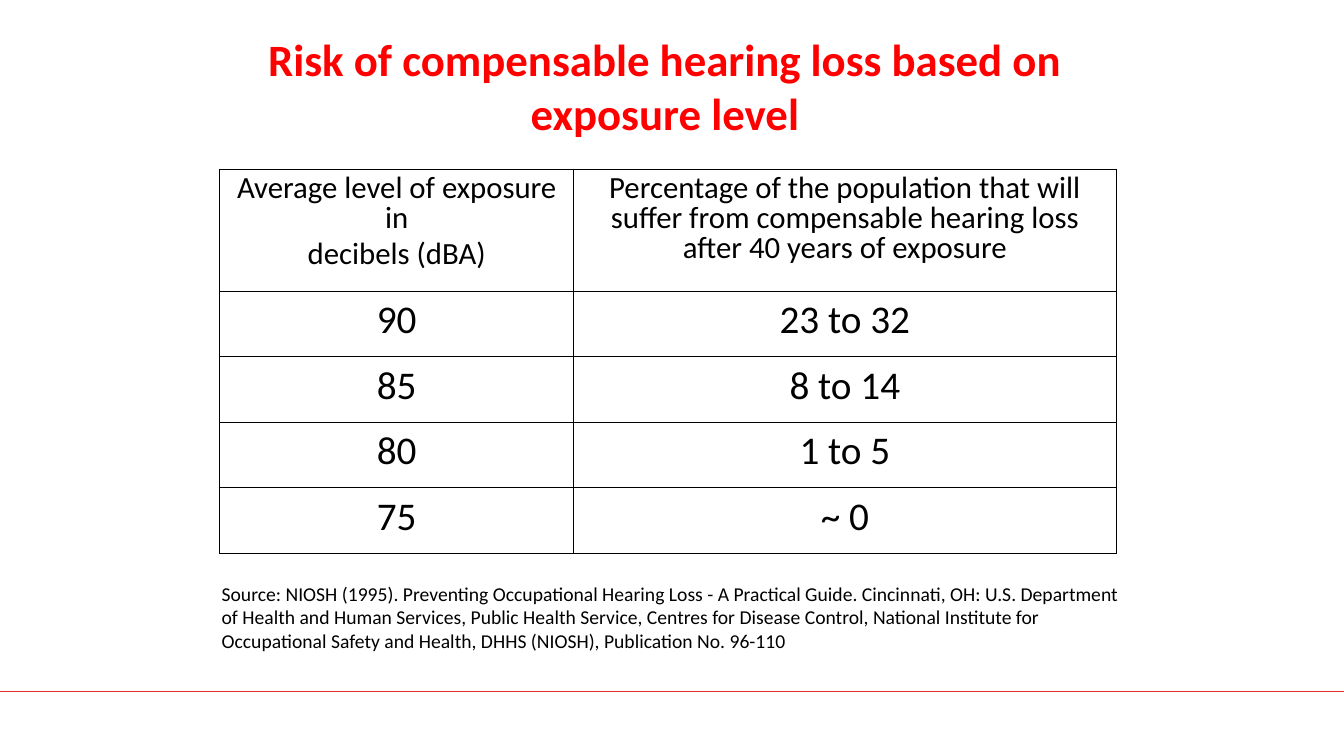
from dataclasses import dataclass
from lxml.etree import SubElement
from pptx import Presentation
from pptx.dml.color import RGBColor as RGB
from pptx.enum.shapes import MSO_CONNECTOR as Link
from pptx.enum.text import MSO_AUTO_SIZE as Fit, PP_ALIGN as Align
from pptx.oxml.ns import qn
from pptx.util import Inches, Pt


@dataclass
class Theme:
    face: str = "Calibri"
    ink: str = "000000"
    title: str = "FF0000"
    rule: str = "E62B27"
    title_size: int = 32
    head_size: int = 22
    body_size: int = 28
    note_size: int = 14


theme = Theme()


def write(frame, text, size, color, align=Align.CENTER, bold=False):
    frame.word_wrap = True
    frame.text = text
    for para in frame.paragraphs:
        para.alignment = align
        font = para.font
        font.name, font.size, font.bold = theme.face, Pt(size), bold
        font.color.rgb = RGB.from_string(color)


def outline(cell):
    props = cell._tc.get_or_add_tcPr()
    for at, side in enumerate(("lnL", "lnR", "lnT", "lnB")):
        line = props.makeelement(qn("a:" + side), {"w": str(Pt(1))})
        fill = SubElement(line, qn("a:solidFill"))
        SubElement(fill, qn("a:srgbClr"), val=theme.ink)
        props.insert(at, line)


deck = Presentation()
deck.slide_width, deck.slide_height = Inches(13.33), Inches(7.5)
slide = deck.slides.add_slide(deck.slide_layouts[6])
shapes = slide.shapes

# Footer rule
rule = shapes.add_connector(
    Link.STRAIGHT, Inches(0), Inches(6.86), Inches(13.33), Inches(6.86))
rule.line.color.rgb = RGB.from_string(theme.rule)
rule.line.width = Pt(0.25)
SubElement(rule._element.spPr, qn("a:effectLst"))

# Risk table
rows = [
    ("Average level of exposure in\ndecibels (dBA)",
     "Percentage of the population that will suffer from compensable "
     "hearing loss after 40 years of exposure"),
    ("90", "23 to 32"),
    ("85", "8 to 14"),
    ("80", "1 to 5"),
    ("75", "~ 0"),
]
table = shapes.add_table(
    len(rows), 2, Inches(2.18), Inches(1.68), Inches(8.89), Inches(3.81)).table
table.first_row = table.horz_banding = False
for col, width in zip(table.columns, (3.51, 5.38)):
    col.width = Inches(width)
for r, row in enumerate(rows):
    head = r == 0
    table.rows[r].height = Inches(1.21 if head else 0.65)
    for c, text in enumerate(row):
        cell = table.cell(r, c)
        cell.fill.background()
        outline(cell)
        size = theme.head_size if head else theme.body_size
        write(cell.text_frame, text, size, theme.ink)
        if head:
            for n, para in enumerate(cell.text_frame.paragraphs):
                para.line_spacing = 0.8
                if n:
                    para.space_before = Pt(4.4)

# Source note
note = shapes.add_textbox(
    Inches(2.1), Inches(5.72), Inches(9.15), Inches(0.81)).text_frame
write(note,
      "Source: NIOSH (1995). Preventing Occupational Hearing Loss - A Practical "
      "Guide. Cincinnati, OH: U.S. Department of Health and Human Services, "
      "Public Health Service, Centres for Disease Control, National Institute "
      "for Occupational Safety and Health, DHHS (NIOSH), Publication No. 96-110",
      theme.note_size, theme.ink, Align.LEFT)
note.auto_size = Fit.SHAPE_TO_FIT_TEXT

# Title
title = shapes.add_textbox(
    Inches(1.94), Inches(0.27), Inches(9.31), Inches(1.18)).text_frame
write(title, "Risk of compensable hearing loss based on exposure level",
      theme.title_size, theme.title, bold=True)
title.auto_size = Fit.SHAPE_TO_FIT_TEXT

deck.save("out.pptx")
